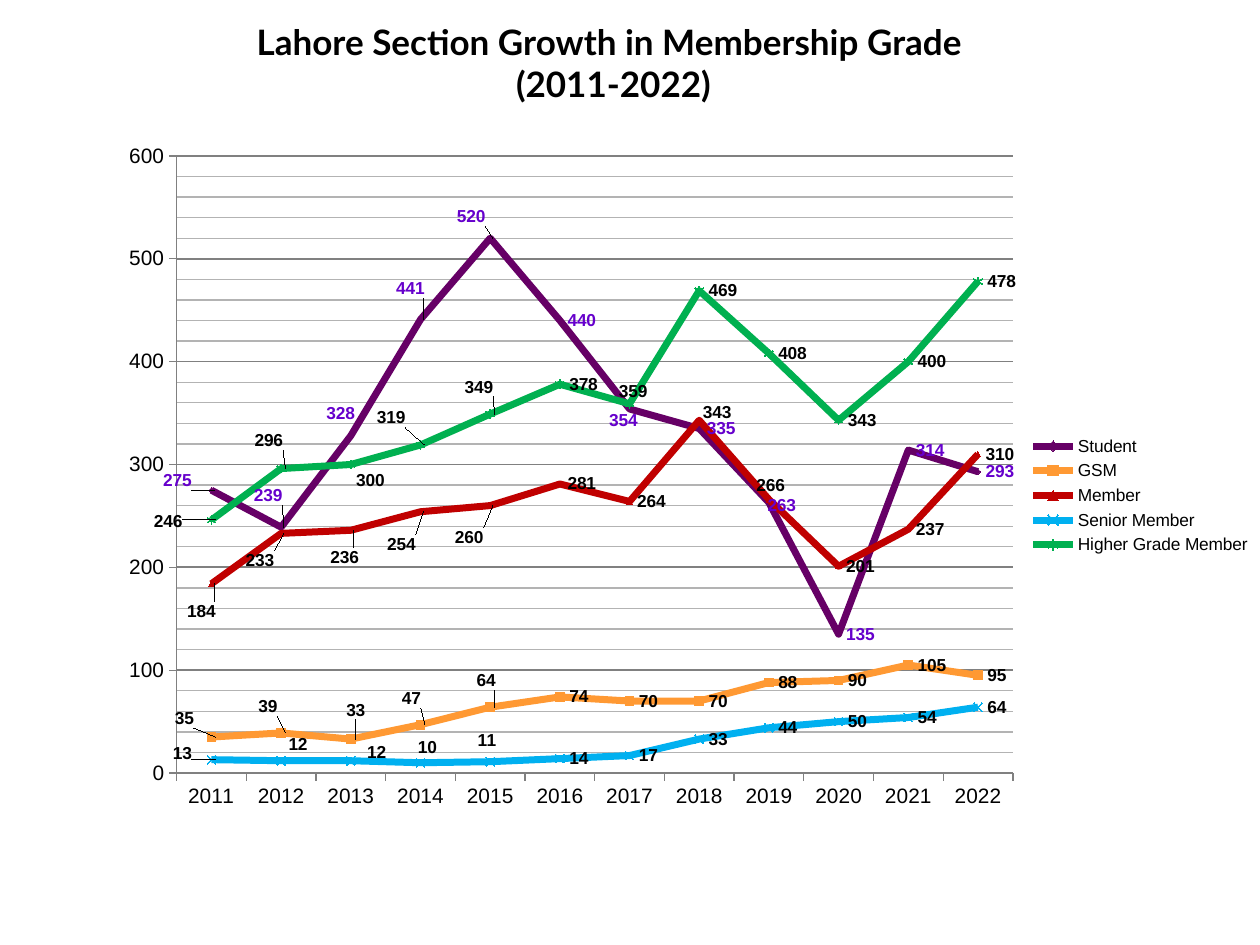
import pptx
import pptx.chart.data
import pptx.dml.color
import pptx.enum.chart
import pptx.enum.text
import pptx.oxml
import pptx.oxml.ns
import pptx.util

EMU_PER_PX = 914400 / 126
COLORS = {
    "text": "000000", "student": "660066", "student_label": "6600CC", "gsm": "FF9933",
    "member": "C00000", "senior": "00B0F0", "higher": "00B050",
    "axis": "808080", "minor": "B3B3B3",
}
YEARS = [str(year) for year in range(2011, 2023)]

# Name, line colour, label colour, marker, marker size, values,
# and label shifts in px from the place right of the point
SERIES = [
    ("Student", "student", "student_label", "DIAMOND", 3,
     (275, 239, 328, 441, 520, 440, 354, 335, 263, 135, 314, 293),
     {0: (-56, -10), 1: (-35, -32), 2: (-32, -22), 3: (-32, -31), 4: (-41, -22),
      6: (-28, 12), 8: (-9, 3)}),
    ("GSM", "gsm", "text", "SQUARE", 5,
     (35, 39, 33, 47, 64, 74, 70, 70, 88, 90, 105, 95),
     {0: (-46, -19), 1: (-32, -26), 2: (-14, -29), 3: (-28, -26), 4: (-23, -27)}),
    ("Member", "member", "text", "TRIANGLE", 3,
     (184, 233, 236, 254, 260, 281, 264, 343, 266, 201, 237, 310),
     {0: (-32, 28), 1: (-43, 27), 2: (-28, 27), 3: (-41, 33), 4: (-43, 32),
      7: (-4, -8), 8: (-20, -14)}),
    ("Senior Member", "senior", "text", "X", 5,
     (13, 12, 12, 10, 11, 14, 17, 33, 44, 50, 54, 64),
     {0: (-48, -6), 1: (-2, -16), 2: (7, -8), 3: (-12, -15), 4: (-22, -21)}),
    ("Higher Grade Member", "higher", "text", "STAR", 5,
     (246, 296, 300, 319, 349, 378, 359, 469, 408, 343, 400, 478),
     {0: (-67, 2), 1: (-36, -28), 2: (-4, 16), 3: (-53, -27), 4: (-35, -27),
      6: (-20, -12)}),
]


def px(length):
    return pptx.util.Emu(round(length * EMU_PER_PX))


def rgb(name):
    return pptx.dml.color.RGBColor.from_string(COLORS[name])


def manual_layout(**values):
    items = "".join(f'<c:{tag} val="{value}"/>' for tag, value in values.items())
    return pptx.oxml.parse_xml(
        f'<c:layout {pptx.oxml.ns.nsdecls("c")}><c:manualLayout>{items}</c:manualLayout></c:layout>')


def line_properties(color, width):
    return pptx.oxml.parse_xml(
        f'<c:spPr {pptx.oxml.ns.nsdecls("c", "a")}><a:ln w="{pptx.util.Pt(width)}"><a:solidFill>'
        f'<a:srgbClr val="{COLORS[color]}"/></a:solidFill></a:ln></c:spPr>')


class SlideBuilder:
    title_font = "Lato"
    chart_font = "Arial"
    axis_size = 11.9
    label_size = 9.9

    def __init__(self, slide):
        self.slide = slide

    def format_font(self, font, size, color="text", bold=False, name=chart_font):
        font.name = name
        font.size = pptx.util.Pt(size)
        font.bold = bold
        font.color.rgb = rgb(color)

    def format_line(self, line, color, width):
        line.color.rgb = rgb(color)
        line.width = pptx.util.Pt(width)

    def title(self, lines, left, top, width, height):
        shape = self.slide.shapes.title
        shape.left, shape.top, shape.width, shape.height = map(px, (left, top, width, height))
        frame = shape.text_frame
        frame.word_wrap = True
        frame.auto_size = pptx.enum.text.MSO_AUTO_SIZE.NONE
        frame.vertical_anchor = pptx.enum.text.MSO_ANCHOR.MIDDLE
        paragraph = frame.paragraphs[0]
        paragraph.alignment = pptx.enum.text.PP_ALIGN.CENTER
        for index, text in enumerate(lines):
            if index:
                paragraph.add_line_break()
            run = paragraph.add_run()
            run.text = text
            self.format_font(run.font, 20, bold=True, name=self.title_font)

    def line_chart(self, left, top, width, height):
        data = pptx.chart.data.CategoryChartData()
        data.categories = YEARS
        for name, _, _, _, _, values, _ in SERIES:
            data.add_series(name, values)
        chart = self.slide.shapes.add_chart(
            pptx.enum.chart.XL_CHART_TYPE.LINE_MARKERS,
            *map(px, (left, top, width, height)), data).chart
        chart.has_title = False
        self.format_font(chart.font, self.axis_size)
        chart.has_legend = True
        chart.legend.position = pptx.enum.chart.XL_LEGEND_POSITION.RIGHT
        chart.legend.include_in_layout = False
        self.format_font(chart.legend.font, self.label_size)
        self.axes(chart)
        chart.plots[0].vary_by_categories = False
        for series, settings in zip(chart.plots[0].series, SERIES):
            self.series(series, settings, width, height)

        # Fixed inner plot area
        plot_area = chart.plots[0]._element.getparent()
        for layout in plot_area.findall(pptx.oxml.ns.qn("c:layout")):
            plot_area.remove(layout)
        plot_area.insert(0, manual_layout(
            layoutTarget="inner", xMode="edge", yMode="edge", x=0.073, y=0.017, w=0.713, h=0.878))

    def axes(self, chart):
        for axis in (chart.category_axis, chart.value_axis):
            axis.major_tick_mark = pptx.enum.chart.XL_TICK_MARK.OUTSIDE
            self.format_line(axis.format.line, "axis", 0.75)
            self.format_font(axis.tick_labels.font, self.axis_size)
        axis = chart.value_axis
        axis.minimum_scale, axis.maximum_scale = 0, 600
        axis.major_unit, axis.minor_unit = 100, 20
        axis.tick_labels.number_format = "#,##0"
        axis.tick_labels.number_format_is_linked = False
        axis.has_major_gridlines = axis.has_minor_gridlines = True
        self.format_line(axis.major_gridlines.format.line, "axis", 1)
        minor_gridlines = axis._element.find(pptx.oxml.ns.qn("c:minorGridlines"))
        minor_gridlines.append(line_properties("minor", 0.75))

    def series(self, series, settings, chart_width, chart_height):
        _, color, label_color, marker, marker_size, _, shifts = settings
        series.smooth = False
        self.format_line(series.format.line, color, 4)
        series.marker.style = pptx.enum.chart.XL_MARKER_STYLE[marker]
        series.marker.size = marker_size
        self.format_line(series.marker.format.line, color, 0.75)
        if marker == "X":
            series.marker.format.fill.background()
        else:
            series.marker.format.fill.solid()
            series.marker.format.fill.fore_color.rgb = rgb(color)

        # Labels right of the points, some of them moved
        labels = series.data_labels
        labels.show_value = True
        for index in shifts:
            self.label(series.points[index].data_label, label_color)
        self.label(labels, label_color)
        moved = labels._element.findall(pptx.oxml.ns.qn("c:dLbl"))
        for element, (dx, dy) in zip(moved, shifts.values()):
            element.insert(1, manual_layout(
                x=round(dx / chart_width, 4), y=round(dy / chart_height, 4)))

    def label(self, label, color):
        label.position = pptx.enum.chart.XL_LABEL_POSITION.RIGHT
        self.format_font(label.font, self.label_size, color, bold=True)


def main():
    presentation = pptx.Presentation()
    presentation.slide_width, presentation.slide_height = px(1260), px(945)
    builder = SlideBuilder(presentation.slides.add_slide(presentation.slide_layouts[5]))
    builder.line_chart(91, 144, 1173, 703)
    builder.title(("Lahore Section Growth in Membership Grade ", "(2011-2022)"), 73, 21, 1081, 84)
    presentation.save("out.pptx")


if __name__ == "__main__":
    main()
